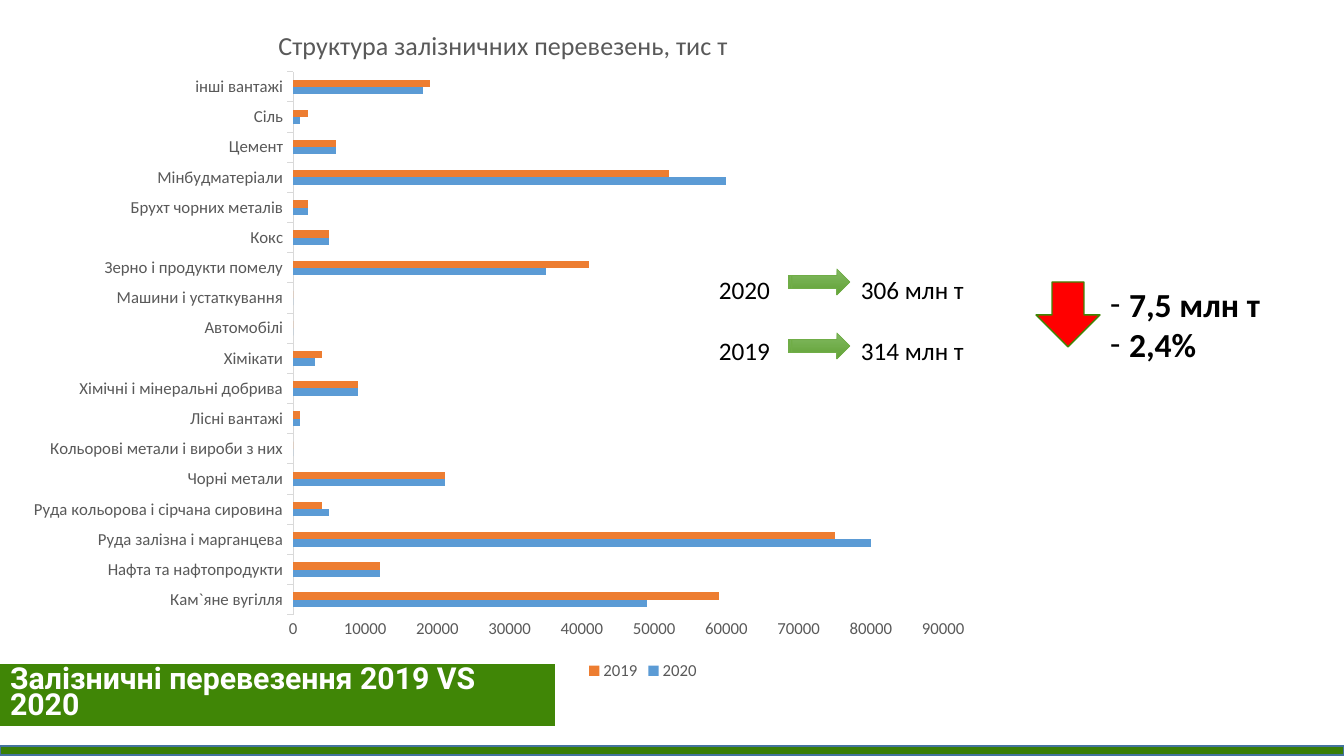
from lxml import etree
from pptx import Presentation
from pptx.chart.data import CategoryChartData
from pptx.dml.color import RGBColor
from pptx.enum.chart import XL_CHART_TYPE as CT, XL_LEGEND_POSITION as LP, XL_TICK_MARK as TM
from pptx.enum.shapes import MSO_SHAPE as MS
from pptx.enum.text import MSO_ANCHOR, MSO_AUTO_SIZE, PP_ALIGN
from pptx.oxml.ns import qn
from pptx.util import Pt

PX = 914400 / 100.8


class Theme:
    green = RGBColor.from_string("408606")
    band = RGBColor.from_string("397E06")
    band_line = RGBColor.from_string("43739E")
    arrow_top = RGBColor.from_string("81B861")
    arrow_bottom = RGBColor.from_string("62A336")
    arrow_line = RGBColor.from_string("70AD47")
    red = RGBColor.from_string("FF0000")
    blue = RGBColor.from_string("5B9BD5")
    orange = RGBColor.from_string("ED7D31")
    grey = RGBColor.from_string("595959")
    axis = RGBColor.from_string("D9D9D9")
    black = RGBColor.from_string("000000")
    white = RGBColor.from_string("FFFFFF")
    body_font, title_font = "Calibri", "Roboto"
    title, chart_title, label, total, change = 21.6, 18.6, 12, 18, 24


def box(*lengths):
    return [round(n * PX) for n in lengths]


def style(font, size, color, name=Theme.body_font, bold=False):
    font.size, font.name, font.bold = Pt(size), name, bold
    font.color.rgb = color


prs = Presentation()
prs.slide_width, prs.slide_height = box(1344, 756)
s = prs.slides.add_slide(prs.slide_layouts[1])
title, changes = s.placeholders

# Green band along the bottom edge
band = s.shapes.add_shape(MS.RECTANGLE, *box(0, 746, 1344, 9))
band.shadow.inherit = False
band.fill.solid()
band.fill.fore_color.rgb = Theme.band
band.line.color.rgb = Theme.band_line
band.line.width = Pt(1)

# Freight by cargo type: 2020, 2019 in thousand tonnes
freight = [
    ("Кам`яне вугілля", 49000, 59000),
    ("Нафта та нафтопродукти", 12000, 12000),
    ("Руда залізна і марганцева", 80000, 75000),
    ("Руда кольорова і сірчана сировина", 5000, 4000),
    ("Чорні метали", 21000, 21000),
    ("Кольорові метали і вироби з них", 0, 0),
    ("Лісні вантажі", 1000, 1000),
    ("Хімічні і мінеральні добрива", 9000, 9000),
    ("Хімікати", 3000, 4000),
    ("Автомобілі", 0, 0),
    ("Машини і устаткування", 0, 0),
    ("Зерно і продукти помелу", 35000, 41000),
    ("Кокс", 5000, 5000),
    ("Брухт чорних металів", 2000, 2000),
    ("Мінбудматеріали", 60000, 52000),
    ("Цемент", 6000, 6000),
    ("Сіль", 1000, 2000),
    ("інші вантажі", 18000, 19000),
]
names, y2020, y2019 = zip(*freight)
data = CategoryChartData()
data.categories = names
data.add_series("2020", y2020)
data.add_series("2019", y2019)
chart = s.shapes.add_chart(CT.BAR_CLUSTERED, *box(15, -3, 969, 699), data).chart
style(chart.font, Theme.label, Theme.grey)
plot = chart.plots[0]
plot.gap_width, plot.overlap, plot.vary_by_categories = 219, 0, False
for series, color in zip(plot.series, (Theme.blue, Theme.orange)):
    series.format.fill.solid()
    series.format.fill.fore_color.rgb = color
    series.invert_if_negative = False

# Axes, chart title and legend
cat, val = chart.category_axis, chart.value_axis
for axis in (cat, val):
    style(axis.tick_labels.font, Theme.label, Theme.grey)
    axis.has_major_gridlines = False
cat.major_tick_mark, val.major_tick_mark = TM.OUTSIDE, TM.NONE
cat.format.line.color.rgb = Theme.axis
cat.format.line.width = Pt(0.75)
val.format.line.fill.background()
val.minimum_scale, val.maximum_scale, val.major_unit = 0, 90000, 10000
chart.has_title = True
tf = chart.chart_title.text_frame
tf.text = "Структура залізничних перевезень, тис т"
style(tf.paragraphs[0].runs[0].font, Theme.chart_title, Theme.grey)
chart.has_legend = True
chart.legend.position = LP.BOTTOM
chart.legend.include_in_layout = False
style(chart.legend.font, Theme.label, Theme.grey)

# Manual places inside the chart, as shares of its size
plot_area = chart._chartSpace.find(".//" + qn("c:plotArea"))
for el, index, place in (
    (plot_area, 0, {"x": 0.287, "y": 0.107, "w": 0.671, "h": 0.777}),
    (chart.chart_title._element, 1, {"x": 0.267, "y": 0.036}),
    (chart.legend._element, 1, {"x": 0.587, "y": 0.944}),
):
    for old in el.findall(qn("c:layout")):
        el.remove(old)
    layout = etree.Element(qn("c:layout"))
    manual = etree.SubElement(layout, qn("c:manualLayout"))
    if el is plot_area:
        etree.SubElement(manual, qn("c:layoutTarget"), val="inner")
    for key in "xy":
        etree.SubElement(manual, qn(f"c:{key}Mode"), val="edge")
    for key, share in place.items():
        etree.SubElement(manual, qn(f"c:{key}"), val=str(share))
    el.insert(index, layout)

# Yearly totals, each with a striped arrow
tf = s.shapes.add_textbox(*box(709, 269, 360, 102)).text_frame
tf.word_wrap = True
for i, line in enumerate(("2020\t306 млн т", "2019\t314 млн т")):
    p = tf.add_paragraph() if i else tf.paragraphs[0]
    p.text = line
    tabs = etree.SubElement(p._p.get_or_add_pPr(), qn("a:tabLst"))
    etree.SubElement(tabs, qn("a:tab"), pos=str(round(142 * PX)), algn="l")
    p.space_before = Pt(22 * i)
    style(p.runs[0].font, Theme.total, Theme.black)
    sp = s.shapes.add_shape(MS.STRIPED_RIGHT_ARROW, *box(788, 269 + 64 * i, 62, 26))
    sp.shadow.inherit = False
    sp.fill.gradient()
    sp.fill.gradient_angle = 270
    for stop, color in zip(sp.fill.gradient_stops, (Theme.arrow_top, Theme.arrow_bottom)):
        stop.color.rgb = color
    sp.line.color.rgb = Theme.arrow_line
    sp.line.width = Pt(0.5)

# Decline: red arrow and list of changes
sp = s.shapes.add_shape(MS.DOWN_ARROW, *box(1036, 282, 64, 65))
sp.shadow.inherit = False
sp.fill.solid()
sp.fill.fore_color.rgb = Theme.red
sp.line.color.rgb = Theme.green
sp.line.width = Pt(1)
changes.left, changes.top, changes.width, changes.height = box(1100, 279, 244, 92)
tf = changes.text_frame
tf.text = "7,5 млн т\n2,4%"
tf.auto_size = MSO_AUTO_SIZE.NONE
for p in tf.paragraphs:
    pPr = p._p.get_or_add_pPr()
    indent = round(19 * PX)
    pPr.set("marL", str(indent))
    pPr.set("indent", str(-indent))
    etree.SubElement(pPr, qn("a:buFont"), typeface=Theme.body_font)
    etree.SubElement(pPr, qn("a:buChar"), char="-")
    p.space_before, p.line_spacing = Pt(0), 1.0
    style(p.runs[0].font, Theme.change, Theme.black, bold=True)

# Slide title on a green plate, in front of the chart
s.shapes._spTree.append(title._element)
title.left, title.top, title.width, title.height = box(0, 664, 555, 62)
title.fill.solid()
title.fill.fore_color.rgb = Theme.green
tf = title.text_frame
tf.text = "Залізничні перевезення 2019 VS 2020"
tf.auto_size, tf.vertical_anchor = MSO_AUTO_SIZE.NONE, MSO_ANCHOR.MIDDLE
p = tf.paragraphs[0]
p.alignment, p.line_spacing = PP_ALIGN.LEFT, 0.7
style(p.runs[0].font, Theme.title, Theme.white, Theme.title_font, True)

prs.save("out.pptx")
